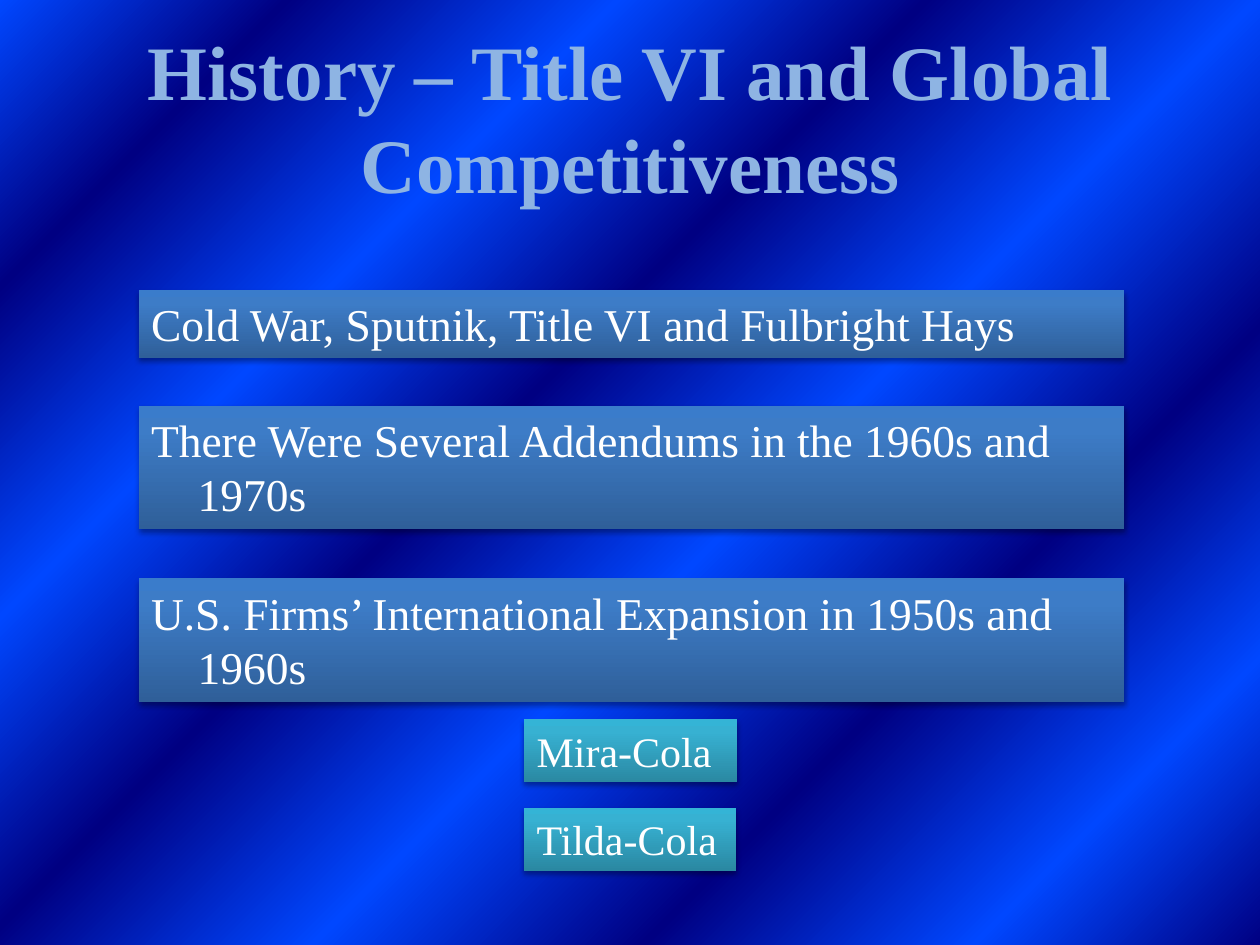
"""Build the slide on the history of Title VI and global competitiveness."""
from pptx import Presentation
from pptx.dml.color import RGBColor
from pptx.enum.shapes import MSO_SHAPE
from pptx.enum.text import MSO_ANCHOR, MSO_AUTO_SIZE, PP_ALIGN
from pptx.oxml import parse_xml
from pptx.oxml.ns import nsdecls, qn
from pptx.util import Inches, Pt

RECTANGLE = MSO_SHAPE.RECTANGLE
TOP = MSO_ANCHOR.TOP
GROW = MSO_AUTO_SIZE.SHAPE_TO_FIT_TEXT
LEFT, CENTER = PP_ALIGN.LEFT, PP_ALIGN.CENTER

TITLE = "History – Title VI and Global Competitiveness"
MILESTONES = [
    (2.3, 0.54, "Cold War, Sputnik, Title VI and Fulbright Hays"),
    (3.22, 0.98, "There Were Several Addendums in the 1960s and 1970s"),
    (4.59, 0.98, "U.S. Firms’ International Expansion in 1950s and 1960s"),
]
FIRMS = [(1.69, True, "Mira-Cola"), (1.68, False, "Tilda-Cola")]
MILESTONE_LEFT, MILESTONE_WIDTH, HANGING = 1.1, 7.82, 0.37
FIRM_LEFT, FIRM_TOP, FIRM_HEIGHT, FIRM_PITCH = 4.16, 5.71, 0.5, 0.7

THEME = {
    "font": "Times New Roman",
    "title": "8EB4E3",
    "text": "FFFFFF",
    "outline": "FFFFFF",
    "shadow": "000000",
    "title_size": 44,
    "milestone_size": 26,
    "firm_size": 24,
    "waves": list(zip((0, 13, 28, 43, 58, 72, 87, 100), ("000082", "0047FF") * 4)),
    "milestone": [(0, "2F5F99"), (80, "3D7CC7"), (100, "3A7CCB")],
    "firm": [(0, "2A88A2"), (80, "37B1D2"), (100, "34B4D6")],
}


def apply_gradient(fill, properties, stops, angle):
    """Fill a shape or background with a linear gradient."""
    fill.solid()
    stop_xml = "".join(
        f'<a:gs pos="{position * 1000}"><a:srgbClr val="{color}"/></a:gs>'
        for position, color in stops
    )
    gradient = parse_xml(
        f'<a:gradFill {nsdecls("a")} rotWithShape="1"><a:gsLst>{stop_xml}</a:gsLst>'
        f'<a:lin ang="{angle * 60000}" scaled="0"/></a:gradFill>'
    )
    properties.replace(properties.find(qn("a:solidFill")), gradient)


def write_text(frame, text, size, color=THEME["text"], bold=False, align=LEFT,
               hanging=0, wrap=True, outline=None):
    """Write one formatted paragraph into a text frame."""
    frame.word_wrap = wrap
    frame.auto_size = GROW
    frame.vertical_anchor = TOP
    paragraph = frame.paragraphs[0]
    paragraph.alignment = align
    if hanging:
        indents = paragraph._p.get_or_add_pPr()
        indents.set("marL", str(Inches(hanging)))
        indents.set("indent", str(Inches(-hanging)))
    run = paragraph.add_run()
    run.text = text
    font = run.font
    font.name, font.size, font.bold = THEME["font"], Pt(size), bold
    font.color.rgb = RGBColor.from_string(color)
    if outline:
        run._r.get_or_add_rPr().insert(0, parse_xml(
            f'<a:ln {nsdecls("a")} w="{Pt(0.75)}"><a:solidFill>'
            f'<a:srgbClr val="{outline}"/></a:solidFill></a:ln>'
        ))


def add_panel(slide, box, stops, text, **text_format):
    """Add a shaded rectangle with a soft shadow and text."""
    panel = slide.shapes.add_shape(RECTANGLE, *map(Inches, box))
    properties = panel._element.spPr
    apply_gradient(panel.fill, properties, stops, 270)
    panel.line.fill.background()
    properties.append(parse_xml(
        f'<a:effectLst {nsdecls("a")}><a:outerShdw blurRad="{Pt(3.1)}" '
        f'dist="{Pt(1.8)}" dir="5400000" rotWithShape="0">'
        f'<a:srgbClr val="{THEME["shadow"]}"><a:alpha val="35000"/></a:srgbClr>'
        '</a:outerShdw></a:effectLst>'
    ))
    write_text(panel.text_frame, text, **text_format)


def main():
    """Assemble and save the slide."""
    deck = Presentation()
    deck.slide_width, deck.slide_height = Inches(10), Inches(7.5)
    slide = deck.slides.add_slide(deck.slide_layouts[5])
    background = slide.background.fill
    apply_gradient(background, slide._element.cSld.bg.bgPr, THEME["waves"], 225)

    title = slide.shapes.title
    title.left, title.top = Inches(1.01), Inches(0.14)
    title.width, title.height = Inches(7.99), Inches(1.58)
    write_text(title.text_frame, TITLE, THEME["title_size"], color=THEME["title"],
               bold=True, align=CENTER, outline=THEME["outline"])

    for top, height, milestone in MILESTONES:
        add_panel(slide, (MILESTONE_LEFT, top, MILESTONE_WIDTH, height),
                  THEME["milestone"], milestone,
                  size=THEME["milestone_size"], hanging=HANGING)
    for row, (width, wrap, firm) in enumerate(FIRMS):
        add_panel(slide, (FIRM_LEFT, FIRM_TOP + row * FIRM_PITCH, width, FIRM_HEIGHT),
                  THEME["firm"], firm, size=THEME["firm_size"], wrap=wrap)
    deck.save("out.pptx")


if __name__ == "__main__":
    main()
